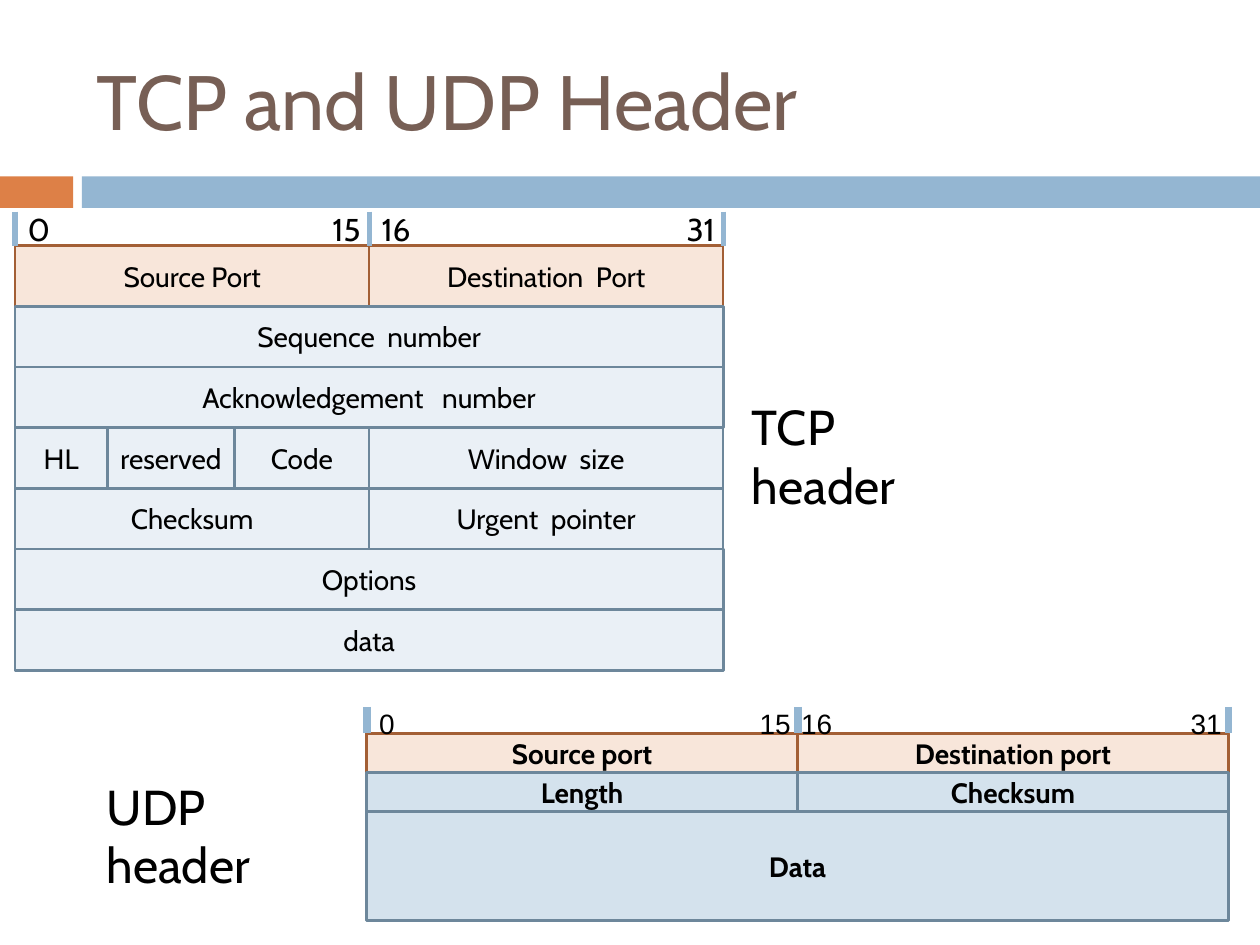
from dataclasses import dataclass

from lxml import etree
from pptx import Presentation, util as u
from pptx.dml.color import RGBColor
from pptx.enum import shapes, text
from pptx.oxml.ns import qn

COLORS = {
    "title": "775F55", "accent": "DD8047", "bar": "94B6D2", "text": "000000",
    "port": "F8E6DA", "port_line": "A35F35",
    "tcp": "EAF0F6", "udp": "D4E2ED", "line": "6D879B",
}


@dataclass
class Row:
    labels: list[str]
    shares: tuple[float, ...]  # column widths as shares of the header width
    units: float = 1           # height in grid rows
    fill: str = "port"
    line: str = "line"


@dataclass
class Header:
    left: float
    top: float
    width: float
    row_height: float
    rows: list[Row]
    bold: bool
    font: str
    size: int             # size of the bit numbers
    number_rise: float    # bit numbers start this far above the grid
    number_size: tuple[float, float]
    end_shift: float      # bits 15 and 31, back from their column edge
    mid_shift: float      # bit 16, back from the middle
    tick: float
    tick_width: float


def color(name: str) -> RGBColor:
    return RGBColor.from_string(COLORS[name])


def write(sp, value: str, size: int, font: str = "Cabin", fill: str = "text",
          bold: bool = False) -> None:
    p = sp.text_frame.paragraphs[0]
    p.text = value
    p.font.size, p.font.name, p.font.bold = u.Pt(size), font, bold
    p.font.color.rgb = color(fill)


def add_text(s, box: tuple[float, ...], value: str, size: int,
             wrap: bool = True, **style):
    sp = s.shapes.add_textbox(*map(u.Inches, box))
    sp.text_frame.word_wrap = wrap
    write(sp, value, size, **style)
    return sp


def add_box(s, box: tuple[float, ...], fill: str, line: str | None = None):
    sp = s.shapes.add_shape(shapes.MSO_SHAPE.RECTANGLE, *map(u.Inches, box))
    sp.shadow.inherit = False
    sp.fill.solid()
    sp.fill.fore_color.rgb = color(fill)
    if line:
        sp.line.color.rgb = color(line)
        sp.line.width = u.Pt(1.5)
    else:
        sp.line.fill.background()
    return sp


def add_cell(s, box: tuple[float, ...], label: str, row: Row, bold: bool) -> None:
    sp = add_box(s, box, row.fill, row.line)
    tf = sp.text_frame
    tf.margin_left = tf.margin_right = 0
    tf.vertical_anchor = text.MSO_ANCHOR.MIDDLE
    write(sp, label, 16, bold=bold)
    tf.paragraphs[0].alignment = text.PP_ALIGN.CENTER


def add_tick(s, x: float, bottom: float, height: float, width: float) -> None:
    ends = map(u.Inches, (x, bottom - height, x, bottom))
    line = s.shapes.add_connector(shapes.MSO_CONNECTOR.STRAIGHT, *ends)
    line.line.color.rgb = color("bar")
    line.line.width = u.Pt(width)
    etree.SubElement(line._element.spPr, qn("a:effectLst"))


def add_header(s, h: Header) -> None:
    # Field grid
    y = h.top
    for row in h.rows:
        x, height = h.left, row.units * h.row_height
        for label, share in zip(row.labels, row.shares):
            add_cell(s, (x, y, share * h.width, height), label, row, h.bold)
            x += share * h.width
        y += height

    # Bit scale
    mid, right = h.left + h.width / 2, h.left + h.width
    for x in (h.left, mid, right):
        add_tick(s, x, h.top, h.tick, h.tick_width)
    numbers = {"0": h.left, "15": mid - h.end_shift,
               "16": mid - h.mid_shift, "31": right - h.end_shift}
    for number, x in numbers.items():
        width = h.number_size[0] - (0.13 if len(number) == 1 else 0)
        add_text(s, (x, h.top - h.number_rise, width, h.number_size[1]),
                 number, h.size, wrap=False, font=h.font)


FULL, HALVES = (1,), (0.5, 0.5)

UDP = Header(
    2.91, 5.82, 6.84, 0.31,
    [Row(["Source port", "Destination port"], HALVES, line="port_line"),
     Row(["Length", "Checksum"], HALVES, fill="udp"),
     Row(["Data"], FULL, 2.8, "udp")],
    bold=True, font="Arial", size=16, number_rise=0.26, number_size=(0.45, 0.37),
    end_shift=0.4, mid_shift=0.07, tick=0.21, tick_width=4.5)

TCP = Header(
    0.12, 1.95, 5.62, 3.37 / 7,
    [Row(["Source Port", "Destination  Port"], HALVES, line="port_line"),
     Row(["Sequence  number"], FULL, fill="tcp"),
     Row(["Acknowledgement   number"], FULL, fill="tcp"),
     Row(["HL", "reserved", "Code", "Window  size"],
         (0.13, 0.18, 0.19, 0.5), fill="tcp"),
     Row(["Checksum", "Urgent  pointer"], HALVES, fill="tcp"),
     Row(["Options"], FULL, fill="tcp"),
     Row(["data"], FULL, fill="tcp")],
    bold=False, font="Cabin", size=18, number_rise=0.33, number_size=(0.48, 0.4),
    end_shift=0.39, mid_shift=0, tick=0.27, tick_width=3)


def main() -> None:
    prs = Presentation()
    prs.slide_width, prs.slide_height = u.Inches(10), u.Inches(7.5)
    s = prs.slides.add_slide(prs.slide_layouts[6])

    # Title and band
    add_box(s, (0, 1.4, 0.58, 0.25), "accent")
    add_box(s, (0.65, 1.4, 9.35, 0.25), "bar")
    title = add_text(s, (0.67, 0.25, 8.92, 1.08), "TCP and UDP Header", 44,
                     fill="title")
    title.text_frame.vertical_anchor = text.MSO_ANCHOR.MIDDLE

    # Header layouts and their names
    for header in (UDP, TCP):
        add_header(s, header)
    add_text(s, (5.87, 3.1, 2.03, 0.57), "TCP header", 28)
    add_text(s, (0.75, 6.11, 2.11, 0.57), "UDP header", 28)

    prs.save("out.pptx")


if __name__ == "__main__":
    main()
